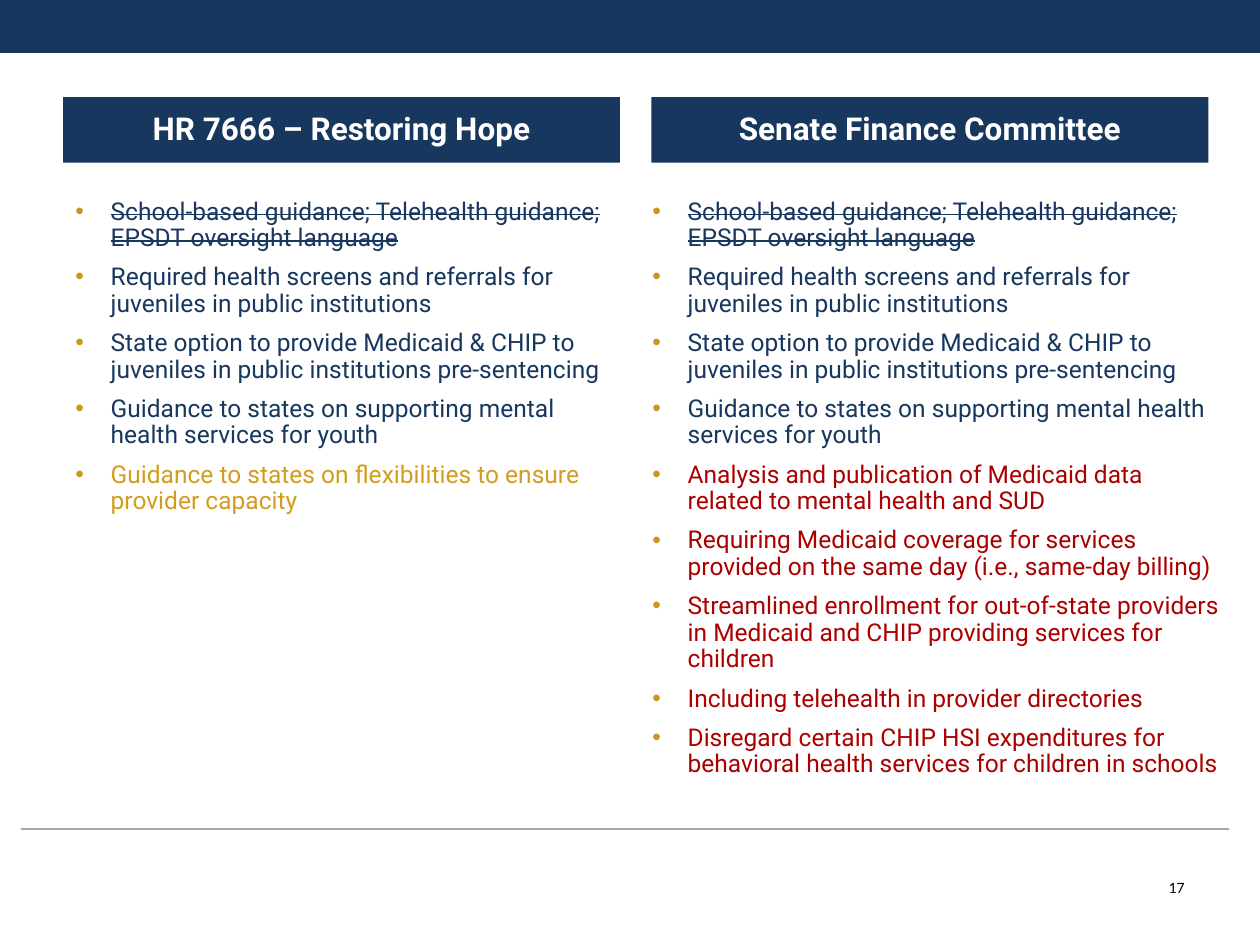
from lxml import etree
from pptx import Presentation
from pptx import util as u
from pptx.dml import color
from pptx.enum import shapes, text
from pptx.oxml import ns

THEME = {
    "navy": color.RGBColor.from_string("17375E"),
    "gold": color.RGBColor.from_string("D29D1E"),
    "bullet": color.RGBColor.from_string("C9961E"),
    "red": color.RGBColor.from_string("AA0000"),
    "rule": color.RGBColor.from_string("A6A6A6"),
    "white": color.RGBColor.from_string("FFFFFF"),
    "black": color.RGBColor.from_string("000000"),
    "heading": {"name": "Roboto", "size": u.Pt(18), "bold": True},
    "body": {"name": "Roboto", "size": u.Pt(14)},
    "number": {"name": "Calibri", "size": u.Pt(9)},
}

shared_items = [
    ("School-based guidance; Telehealth guidance; EPSDT oversight language", "navy", True),
    ("Required health screens and referrals for juveniles in public institutions", "navy", False),
    ("State option to provide Medicaid & CHIP to juveniles in public institutions pre-sentencing", "navy", False),
    ("Guidance to states on supporting mental health services for youth", "navy", False),
]
house_items = [
    ("Guidance to states on flexibilities to ensure provider capacity", "gold", False),
]
senate_items = [
    (wording, "red", False)
    for wording in (
        "Analysis and publication of Medicaid data related to mental health and SUD",
        "Requiring Medicaid coverage for services provided on the same day (i.e., same-day billing)",
        "Streamlined enrollment for out-of-state providers in Medicaid and CHIP providing services for children",
        "Including telehealth in provider directories",
        "Disregard certain CHIP HSI expenditures for behavioral health services for children in schools",
    )
]
columns = [
    ("HR 7666 – Restoring Hope", 0.5, 0.5, 4.42, shared_items + house_items),
    ("Senate Finance Committee", 5.17, 5.08, 4.73, shared_items + senate_items),
]


def add_bar(slide, left, top, width, height):
    shape = slide.shapes.add_shape(
        shapes.MSO_SHAPE.RECTANGLE, *map(u.Inches, (left, top, width, height))
    )
    shape.shadow.inherit = False
    shape.fill.solid()
    shape.fill.fore_color.rgb = THEME["navy"]
    shape.line.fill.background()
    return shape


def add_run(paragraph, wording, style, tint):
    run = paragraph.add_run()
    run.text = wording
    for attribute, value in THEME[style].items():
        setattr(run.font, attribute, value)
    run.font.color.rgb = THEME[tint]
    return run


presentation = Presentation()
presentation.slide_width = u.Inches(10)
presentation.slide_height = u.Inches(7.5)
slide = presentation.slides.add_slide(presentation.slide_layouts[6])

add_bar(slide, 0, 0, 10, 0.42)

rule = slide.shapes.add_connector(
    shapes.MSO_CONNECTOR.STRAIGHT, *map(u.Inches, (0.17, 6.58, 9.75, 6.58))
)
rule.line.color.rgb = THEME["rule"]
rule.line.width = u.Pt(0.75)
etree.SubElement(rule._element.spPr, ns.qn("a:effectLst"))

for heading, heading_left, list_left, list_width, items in columns:
    bar = add_bar(slide, heading_left, 0.77, 4.42, 0.52)
    bar.text_frame.vertical_anchor = text.MSO_ANCHOR.MIDDLE
    paragraph = bar.text_frame.paragraphs[0]
    paragraph.alignment = text.PP_ALIGN.CENTER
    paragraph.line_spacing = 0.9
    add_run(paragraph, heading, "heading", "white")

    box = slide.shapes.add_textbox(*map(u.Inches, (list_left, 1.53, list_width, 4.17)))
    frame = box.text_frame
    frame.word_wrap = True
    for index, (wording, tint, struck) in enumerate(items):
        paragraph = frame.add_paragraph() if index else frame.paragraphs[0]
        spacing = {
            "line_spacing": 0.9,
            "space_before": u.Pt(2.8 if index else 0),
            "space_after": u.Pt(4.5),
        }
        for attribute, value in spacing.items():
            setattr(paragraph, attribute, value)
        properties = paragraph._p.get_or_add_pPr()
        properties.set("marL", str(u.Inches(0.28)))
        properties.set("indent", str(-u.Inches(0.28)))
        bullet_color = etree.SubElement(properties, ns.qn("a:buClr"))
        etree.SubElement(bullet_color, ns.qn("a:srgbClr"), val=str(THEME["bullet"]))
        etree.SubElement(properties, ns.qn("a:buFont"), typeface="Arial")
        etree.SubElement(properties, ns.qn("a:buChar"), char="•")
        run = add_run(paragraph, wording, "body", tint)
        if struck:
            run._r.get_or_add_rPr().set("strike", "sngStrike")

number_box = slide.shapes.add_textbox(*map(u.Inches, (8.75, 6.92, 0.75, 0.4)))
number_box.text_frame.word_wrap = True
paragraph = number_box.text_frame.paragraphs[0]
paragraph.alignment = text.PP_ALIGN.RIGHT
add_run(paragraph, "17", "number", "black")

presentation.save("out.pptx")
